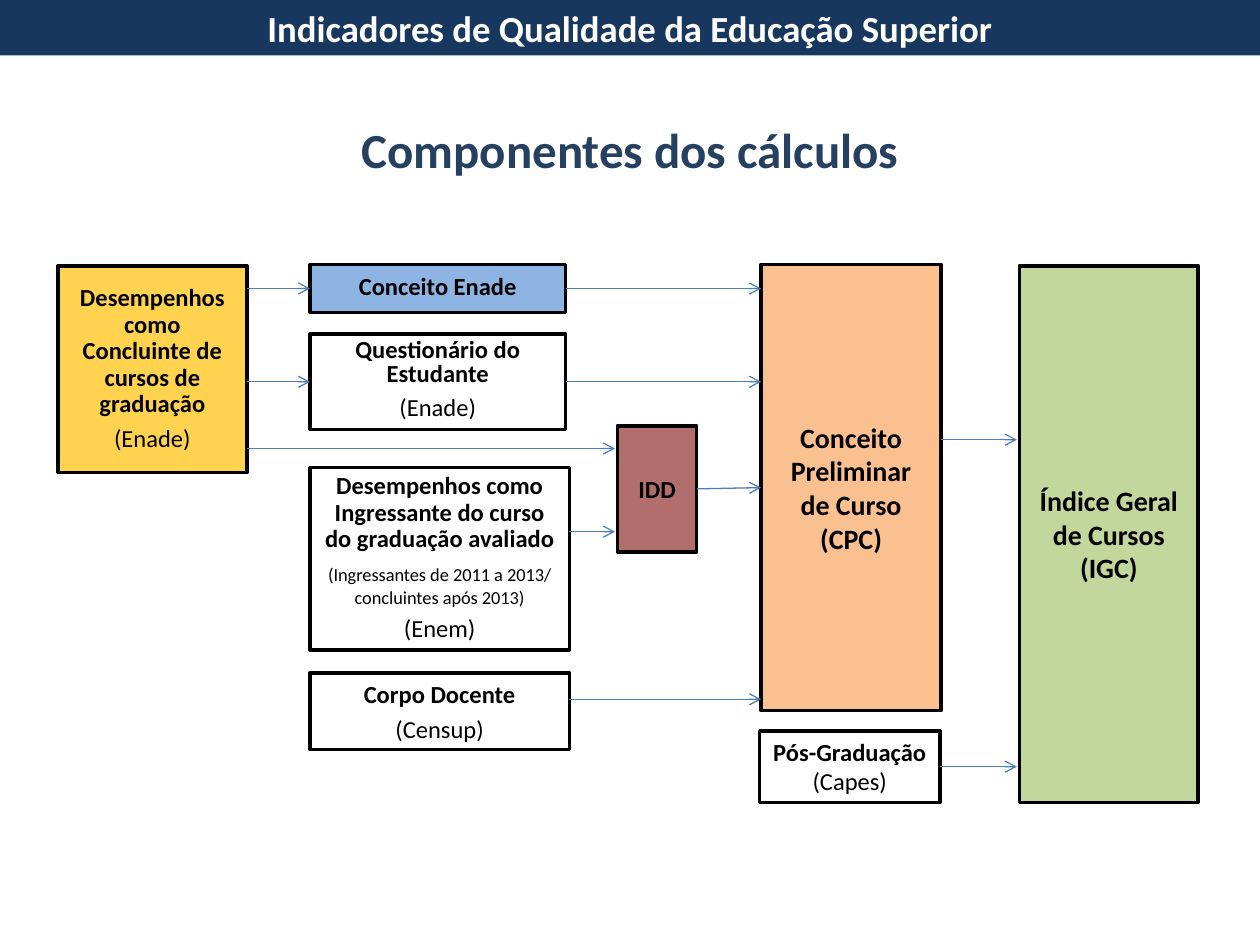
"""Builds the slide on the components of the higher-education quality indicators."""
from lxml import etree
from pptx import Presentation, util as u
from pptx.dml.color import RGBColor
from pptx.enum import shapes, text
from pptx.oxml.ns import qn


def color(value):
    """Turn a hex string into a colour."""
    return RGBColor.from_string(value)


def write(frame, content, size=14, bold=True, ink="000000", spacing=None, before=0, first=True):
    """Write one centred paragraph into a text frame."""
    paragraph = frame.paragraphs[0] if first else frame.add_paragraph()
    paragraph.alignment = text.PP_ALIGN.CENTER
    paragraph.space_before = u.Pt(before)
    if spacing:
        paragraph.line_spacing = spacing
    run = paragraph.add_run()
    run.text = content
    run.font.name = "Calibri"
    run.font.size = u.Pt(size)
    run.font.bold = bold
    run.font.color.rgb = color(ink)


class Diagram:
    """Holds the style, the grid and the current slide."""

    columns, rows = 100, 75
    outline, arrow_line = "000000", "4B7EBC"

    def __init__(self, presentation):
        """Add a title-only slide and measure its grid."""
        self.slide = presentation.slides.add_slide(presentation.slide_layouts[5])
        self.column = presentation.slide_width / self.columns
        self.row = presentation.slide_height / self.rows

    def place(self, left, top, width, height):
        """Convert grid cells into slide lengths."""
        return (round(left * self.column), round(top * self.row),
                round(width * self.column), round(height * self.row))

    def title(self, cells, content, **style):
        """Move and format the title placeholder."""
        shape = self.slide.shapes.title
        shape.left, shape.top, shape.width, shape.height = self.place(*cells)
        shape.text_frame.auto_size = text.MSO_AUTO_SIZE.NONE
        shape.text_frame.vertical_anchor = text.MSO_ANCHOR.TOP
        write(shape.text_frame, content, **style)

    def box(self, cells, fill, *lines, middle=False, outlined=True, opacity=None):
        """Draw a rectangle holding lines of (text, style)."""
        shape = self.slide.shapes.add_shape(shapes.MSO_SHAPE.RECTANGLE, *self.place(*cells))
        shape.shadow.inherit = False
        shape.fill.solid()
        shape.fill.fore_color.rgb = color(fill)
        if opacity:
            tint = shape.fill._xPr.find(".//" + qn("a:srgbClr"))
            etree.SubElement(tint, qn("a:alpha"), val=str(opacity * 1000))
        if outlined:
            shape.line.color.rgb = color(self.outline)
            shape.line.width = u.Pt(2)
        else:
            shape.line.fill.background()
        frame = shape.text_frame
        frame.word_wrap = True
        frame.vertical_anchor = text.MSO_ANCHOR.MIDDLE if middle else text.MSO_ANCHOR.TOP
        for index, (content, style) in enumerate(lines):
            write(frame, content, first=index == 0, **style)
        return shape

    def arrow(self, start, end, level, source=None, target=None):
        """Draw a rightward arrow, joined to side middles where boxes are given."""
        left, top, right, _ = self.place(start, level, end, 0)
        line = self.slide.shapes.add_connector(
            shapes.MSO_CONNECTOR.STRAIGHT, left, top, right, top)
        line.line.color.rgb = color(self.arrow_line)
        line.line.width = u.Pt(0.75)
        etree.SubElement(line.line._get_or_add_ln(), qn("a:tailEnd"), type="arrow")
        etree.SubElement(line._element.spPr, qn("a:effectLst"))
        if source:
            line.begin_connect(source, 3)
        if target:
            line.end_connect(target, 1)


def main():
    """Build and save the slide."""
    presentation = Presentation()
    presentation.slide_width, presentation.slide_height = u.Inches(10), u.Inches(7.5)
    diagram = Diagram(presentation)
    note = dict(bold=False, before=3)
    tight = dict(spacing=0.9)
    large = dict(size=16)

    diagram.title((3.5, 8.5, 93, 6.2), "Componentes dos cálculos",
                  size=28, ink="254061", spacing=1.1)
    diagram.box((0, 0, 100, 4.4), "17375E",
                ("Indicadores de Qualidade da Educação Superior", dict(size=21, ink="FFFFFF")),
                outlined=False)

    diagram.box((4.6, 21.1, 15, 16.4), "FFC000",
                ("Desempenhos como Concluinte de cursos de graduação", tight),
                ("(Enade)", note), middle=True, opacity=69)
    concept = diagram.box((24.6, 21, 20.3, 3.8), "8EB4E3", ("Conceito Enade", {}))
    survey = diagram.box((24.6, 26.5, 20.3, 7.6), "FFFFFF",
                         ("Questionário do Estudante", dict(spacing=0.8)), ("(Enade)", note))
    diagram.box((24.6, 37.1, 20.6, 14.5), "FFFFFF",
                ("Desempenhos como Ingressante do curso do graduação avaliado", tight),
                ("(Ingressantes de 2011 a 2013/ concluintes após 2013)",
                 dict(size=10.5, bold=False, before=6)),
                ("(Enem)", note))
    diagram.box((24.6, 53.4, 20.6, 6.1), "FFFFFF", ("Corpo Docente", {}), ("(Censup)", note))
    difference = diagram.box((49, 33.8, 6.3, 10), "953735", ("IDD", {}),
                             middle=True, opacity=72)
    course = diagram.box((60.4, 21, 14.3, 35.4), "FAC090",
                         ("Conceito Preliminar de Curso (CPC)", large), middle=True)
    graduate = diagram.box((60.3, 58, 14.3, 5.7), "FFFFFF",
                           ("Pós-Graduação", {}), ("(Capes)", dict(bold=False)))
    diagram.box((80.9, 21.1, 14.2, 42.6), "C3D69B",
                ("Índice Geral de Cursos (IGC)", large), middle=True)

    for start, end, level, source, target in (
            (19.6, 24.6, 22.9, None, concept),
            (19.6, 24.6, 30.3, None, survey),
            (19.6, 48.8, 35.6, None, None),
            (45.2, 48.8, 42.2, None, None),
            (44.9, 60.4, 22.9, concept, None),
            (44.9, 60.4, 30.3, survey, None),
            (55.3, 60.4, 38.7, difference, course),
            (45.2, 60.4, 55.5, None, None),
            (74.7, 80.7, 34.9, None, None),
            (74.6, 80.7, 60.85, graduate, None)):
        diagram.arrow(start, end, level, source, target)

    presentation.save("out.pptx")


if __name__ == "__main__":
    main()
